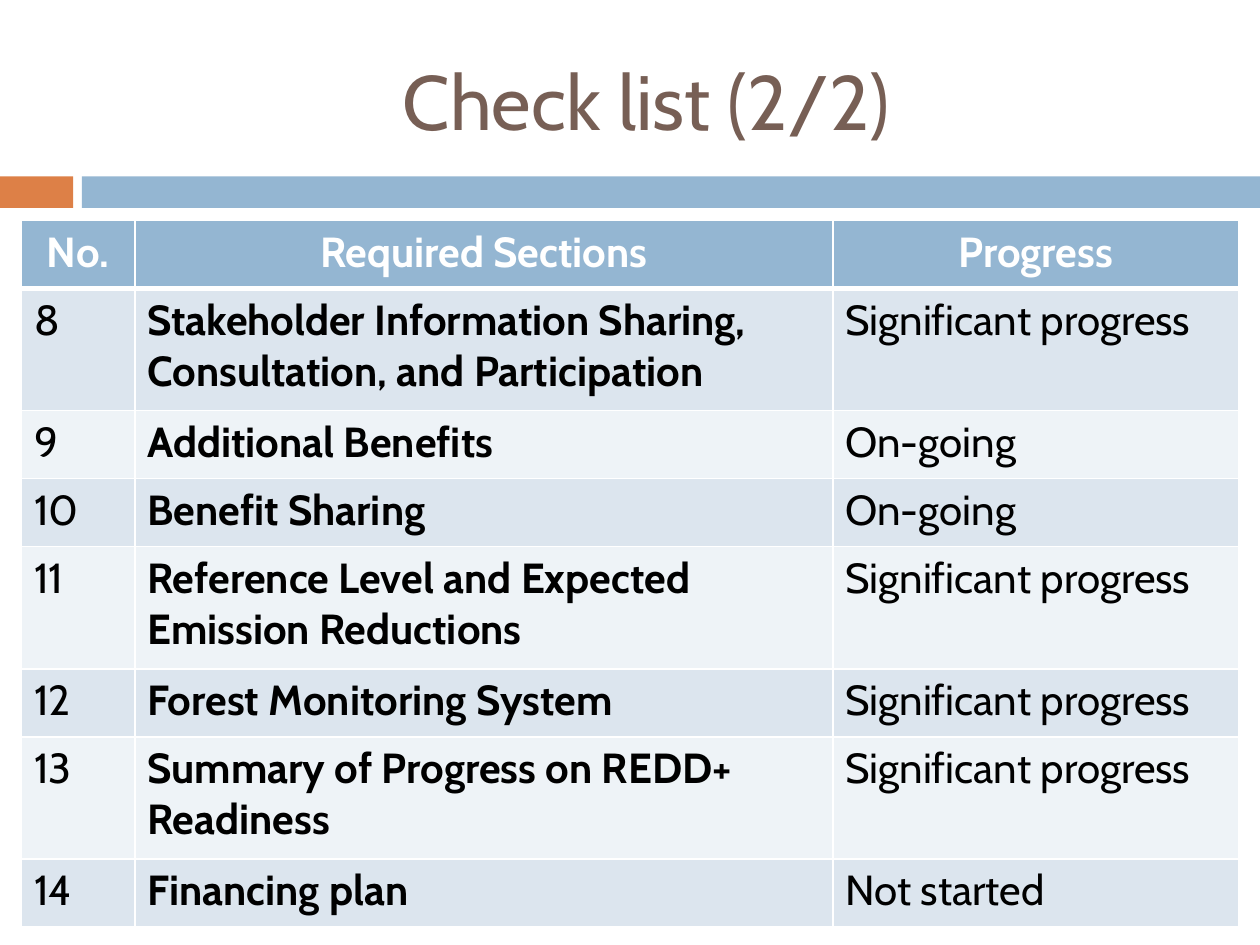
from dataclasses import dataclass

from lxml.etree import SubElement
from pptx import Presentation
from pptx.dml.color import RGBColor as Color
from pptx.enum.shapes import MSO_SHAPE as Shape
from pptx.enum.text import MSO_ANCHOR as Anchor, PP_ALIGN as Align
from pptx.oxml.ns import qn
from pptx.util import Inches, Pt


@dataclass(frozen=True)
class Theme:
    font: str = "Cabin"
    title_size: int = 44
    table_size: int = 24
    title: str = "775F55"
    accent: str = "DD8047"
    blue: str = "94B6D2"
    bands: tuple = ("DCE5EE", "EEF3F7")
    white: str = "FFFFFF"
    black: str = "000000"
    thin: int = 1
    thick: int = 3


class SlideBuilder:
    def __init__(self, slide, theme):
        self.slide = slide
        self.theme = theme

    def add_run(self, paragraph, text, size, color, bold=False):
        run = paragraph.add_run()
        run.text = text
        run.font.name = self.theme.font
        run.font.size = Pt(size)
        run.font.bold = bold
        run.font.color.rgb = Color.from_string(color)

    def bar(self, left, top, width, height, color):
        shape = self.slide.shapes.add_shape(
            Shape.RECTANGLE, Inches(left), Inches(top), Inches(width), Inches(height))
        shape.shadow.inherit = False
        shape.fill.solid()
        shape.fill.fore_color.rgb = Color.from_string(color)
        shape.line.fill.background()

    def title(self, left, top, width, height, text):
        box = self.slide.shapes.add_textbox(
            Inches(left), Inches(top), Inches(width), Inches(height))
        frame = box.text_frame
        frame.word_wrap = True
        frame.vertical_anchor = Anchor.MIDDLE
        paragraph = frame.paragraphs[0]
        paragraph.alignment = Align.CENTER
        self.add_run(paragraph, text, self.theme.title_size, self.theme.title)

    def borders(self, cell, top, bottom):
        properties = cell._tc.get_or_add_tcPr()
        thin = self.theme.thin
        for side, width in (("L", thin), ("R", thin), ("T", top), ("B", bottom)):
            line = SubElement(properties, qn(f"a:ln{side}"), w=str(Pt(width)))
            fill = SubElement(line, qn("a:solidFill"))
            SubElement(fill, qn("a:srgbClr"), val=self.theme.white)

    def cell(self, cell, text, row, column):
        theme = self.theme
        header = row == 0
        self.borders(cell, theme.thick if row == 1 else theme.thin,
                     theme.thick if header else theme.thin)
        cell.fill.solid()
        cell.fill.fore_color.rgb = Color.from_string(
            theme.blue if header else theme.bands[(row - 1) % 2])
        paragraph = cell.text_frame.paragraphs[0]
        paragraph.alignment = Align.CENTER if header else Align.LEFT
        self.add_run(paragraph, text, theme.table_size,
                     theme.white if header else theme.black,
                     bold=header or column == 1)

    def table(self, left, top, widths, heights, rows):
        table = self.slide.shapes.add_table(
            len(rows), len(widths), Inches(left), Inches(top),
            Inches(sum(widths)), Inches(sum(heights))).table
        for column, width in zip(table.columns, widths):
            column.width = Inches(width)
        for table_row, height in zip(table.rows, heights):
            table_row.height = Inches(height)
        for row, texts in enumerate(rows):
            for column, text in enumerate(texts):
                self.cell(table.cell(row, column), text, row, column)


CHECKLIST = [
    ("No.", "Required Sections", "Progress"),
    ("8", "Stakeholder Information Sharing, Consultation, and Participation",
     "Significant progress"),
    ("9", "Additional Benefits", "On-going"),
    ("10", "Benefit Sharing", "On-going"),
    ("11", "Reference Level and Expected Emission Reductions", "Significant progress"),
    ("12", "Forest Monitoring System", "Significant progress"),
    ("13", "Summary of Progress on REDD+ Readiness", "Significant progress"),
    ("14", "Financing plan", "Not started"),
]
ONE_LINE, TWO_LINES = 0.54, 0.97
WRAP_LENGTH = 30  # longer section names take two lines


def main():
    presentation = Presentation()
    presentation.slide_width = Inches(10)
    presentation.slide_height = Inches(7.5)
    theme = Theme()
    builder = SlideBuilder(
        presentation.slides.add_slide(presentation.slide_layouts[6]), theme)

    # Divider bars
    builder.bar(0, 1.4, 0.58, 0.25, theme.accent)
    builder.bar(0.65, 1.4, 9.35, 0.25, theme.blue)

    # Title
    builder.title(0.67, 0.25, 8.92, 1.08, "Check list (2/2)")

    # Checklist table
    heights = [TWO_LINES if len(section) > WRAP_LENGTH else ONE_LINE
               for _, section, _ in CHECKLIST]
    builder.table(0.17, 1.75, (0.9, 5.54, 3.22), heights, CHECKLIST)

    presentation.save("out.pptx")


if __name__ == "__main__":
    main()
